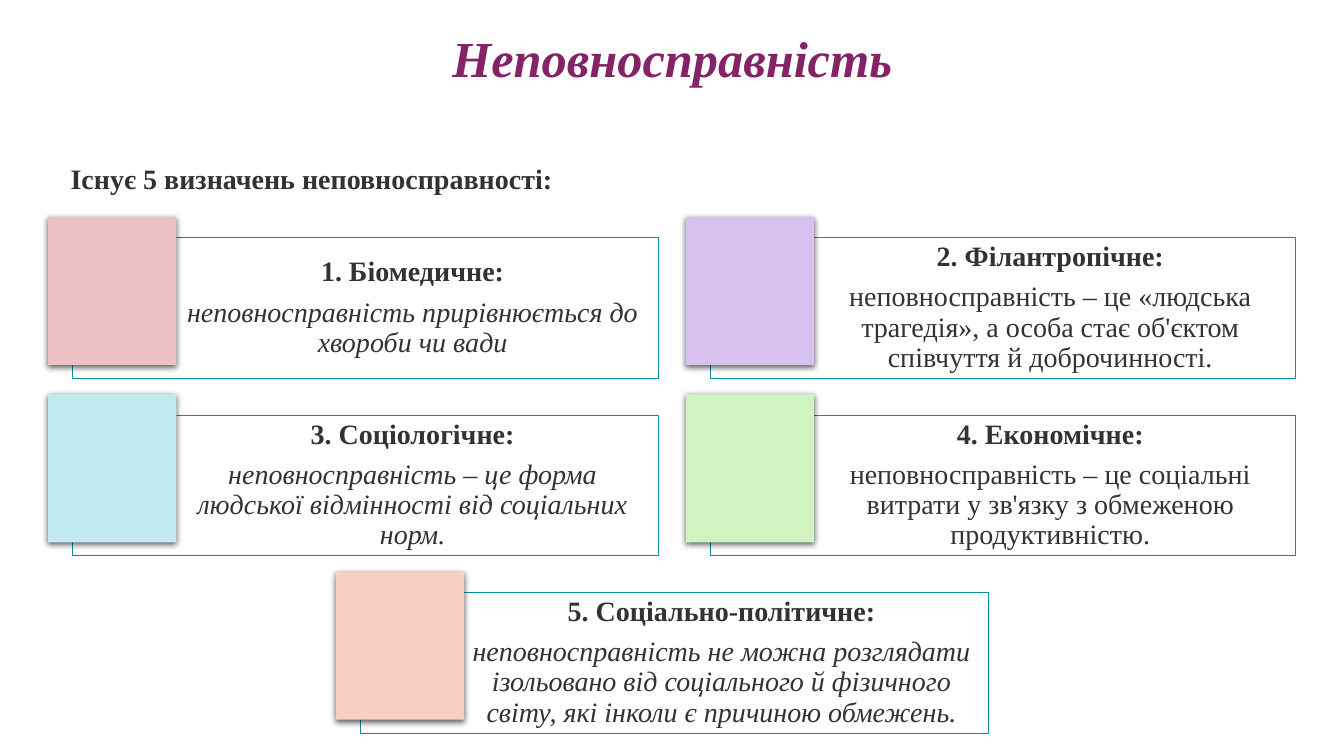
import pptx
import pptx.dml.color
import pptx.enum.shapes
import pptx.enum.text
import pptx.oxml
import pptx.oxml.ns
import pptx.util

Pt = pptx.util.Pt
RGB = pptx.dml.color.RGBColor
ALIGN = pptx.enum.text.PP_ALIGN
ANCHOR = pptx.enum.text.MSO_ANCHOR
RECT = pptx.enum.shapes.MSO_SHAPE.RECTANGLE

# Content
TITLE = "Неповносправність"
INTRO = "Існує 5 визначень неповносправності:"
PINK, LILAC, AQUA = RGB(0xEB, 0xC1, 0xC4), RGB(0xD8, 0xC1, 0xEE), RGB(0xC1, 0xEB, 0xF0)
GREEN, PEACH = RGB(0xD0, 0xF3, 0xC1), RGB(0xF5, 0xD0, 0xC1)
# heading, definition, italic definition, swatch colour
DEFINITIONS = [
    ("1. Біомедичне:", "неповносправність прирівнюється до хвороби чи вади", True, PINK),
    ("2. Філантропічне:", "неповносправність – це «людська трагедія», а особа стає "
     "об'єктом співчуття й доброчинності.", False, LILAC),
    ("3. Соціологічне:", "неповносправність – це форма людської відмінності від "
     "соціальних норм.", True, AQUA),
    ("4. Економічне:", "неповносправність – це соціальні витрати у зв'язку з обмеженою "
     "продуктивністю.", False, GREEN),
    ("5. Соціально-політичне:", "неповносправність не можна розглядати ізольовано від "
     "соціального й фізичного світу, які інколи є причиною обмежень.", True, PEACH),
]

# Formats
PLUM, INK = RGB(0x85, 0x23, 0x67), RGB(0x32, 0x32, 0x32)
TEAL, WHITE = RGB(0x07, 0x90, 0x97), RGB(0xFF, 0xFF, 0xFF)
FONT = "Times New Roman"
TITLE_FONT = {"name": FONT, "size": Pt(36), "bold": True, "italic": True}
HEAD_FONT = {"name": FONT, "size": Pt(20), "bold": True, "italic": False}
TEXT_FONT = {**HEAD_FONT, "bold": False}
CENTRED = {"alignment": ALIGN.CENTER, "line_spacing": 0.9, "space_before": Pt(0)}
BOX_FRAME = {"word_wrap": True, "vertical_anchor": ANCHOR.MIDDLE, "margin_left": Pt(73.5),
             "margin_right": Pt(5.8), "margin_top": Pt(5.8), "margin_bottom": Pt(5.8)}

# Layout: two columns, last box alone in the third row
LEFT, TOP, COL_STEP, ROW_STEP = 51.8, 169.7, 455.5, 126.7
BOX_W, BOX_H = 418.2, 100.6
LAST_LEFT, LAST_W = 257.3, 448.6
SWATCH_W, SWATCH_H, SWATCH_DX, SWATCH_DY = 91.6, 105.8, -17.4, -14.8

A_NS = pptx.oxml.ns.nsdecls("a")
SHADOW = (f'<a:effectLst {A_NS}><a:outerShdw blurRad="{Pt(4.5)}" dist="{Pt(1.5)}" '
          'dir="5400000" rotWithShape="0"><a:srgbClr val="000000"><a:alpha val="63000"/>'
          '</a:srgbClr></a:outerShdw></a:effectLst>')


def apply(target, values):
    for name, value in values.items():
        setattr(target, name, value)


def place(sp, left, top, width, height):
    apply(sp, {"left": Pt(left), "top": Pt(top), "width": Pt(width), "height": Pt(height)})


def write(p, text, para, font, color):
    apply(p, para)
    r = p.add_run()
    r.text = text
    apply(r.font, font)
    r.font.color.rgb = color


def add_rect(s, left, top, width, height, fill):
    sp = s.shapes.add_shape(RECT, Pt(left), Pt(top), Pt(width), Pt(height))
    sp.shadow.inherit = False
    sp.fill.solid()
    sp.fill.fore_color.rgb = fill
    return sp


def add_definition(s, left, top, width, heading, text, italic, color):
    # Outlined text box with a translucent fill
    sp = add_rect(s, left, top, width, BOX_H, WHITE)
    rgb = sp.fill._xPr.find(".//" + pptx.oxml.ns.qn("a:srgbClr"))
    rgb.append(pptx.oxml.parse_xml(f'<a:alpha {A_NS} val="40000"/>'))
    sp.line.color.rgb = TEAL
    sp.line.width = Pt(0.5)
    tf = sp.text_frame
    apply(tf, BOX_FRAME)
    para = {**CENTRED, "space_after": Pt(7)}
    write(tf.paragraphs[0], heading, para, HEAD_FONT, INK)
    write(tf.add_paragraph(), text, para, {**TEXT_FONT, "italic": italic}, INK)

    # Colour swatch with a soft shadow
    sp = add_rect(s, left + SWATCH_DX, top + SWATCH_DY, SWATCH_W, SWATCH_H, color)
    sp.line.fill.background()
    pr = sp._element.spPr
    pr.remove(pr.find(pptx.oxml.ns.qn("a:effectLst")))
    pr.append(pptx.oxml.parse_xml(SHADOW))


def main():
    prs = pptx.Presentation()
    prs.slide_width, prs.slide_height = Pt(960), Pt(540)
    s = prs.slides.add_slide(prs.slide_layouts[1])

    # Title
    title, body = s.placeholders
    place(title, 34.6, 20.2, 891.4, 46.8)
    title.text_frame.vertical_anchor = ANCHOR.MIDDLE
    write(title.text_frame.paragraphs[0], TITLE, CENTRED, TITLE_FONT, PLUM)

    # Introductory line, no bullet
    place(body, 14.4, 108.7, 891.4, 62.6)
    p = body.text_frame.paragraphs[0]
    pr = p._p.get_or_add_pPr()
    pr.set("marL", "0")
    pr.set("indent", str(Pt(28.8)))
    pr.append(pptx.oxml.parse_xml(f"<a:buNone {A_NS}/>"))
    write(p, INTRO, {"alignment": ALIGN.JUSTIFY, "line_spacing": 1.14, "space_before": Pt(0)},
          HEAD_FONT, INK)

    # Definitions
    for i, definition in enumerate(DEFINITIONS):
        row, col = divmod(i, 2)
        left, width = LEFT + col * COL_STEP, BOX_W
        if i == len(DEFINITIONS) - 1:
            left, width = LAST_LEFT, LAST_W
        add_definition(s, left, TOP + row * ROW_STEP, width, *definition)

    prs.save("out.pptx")


if __name__ == "__main__":
    main()
